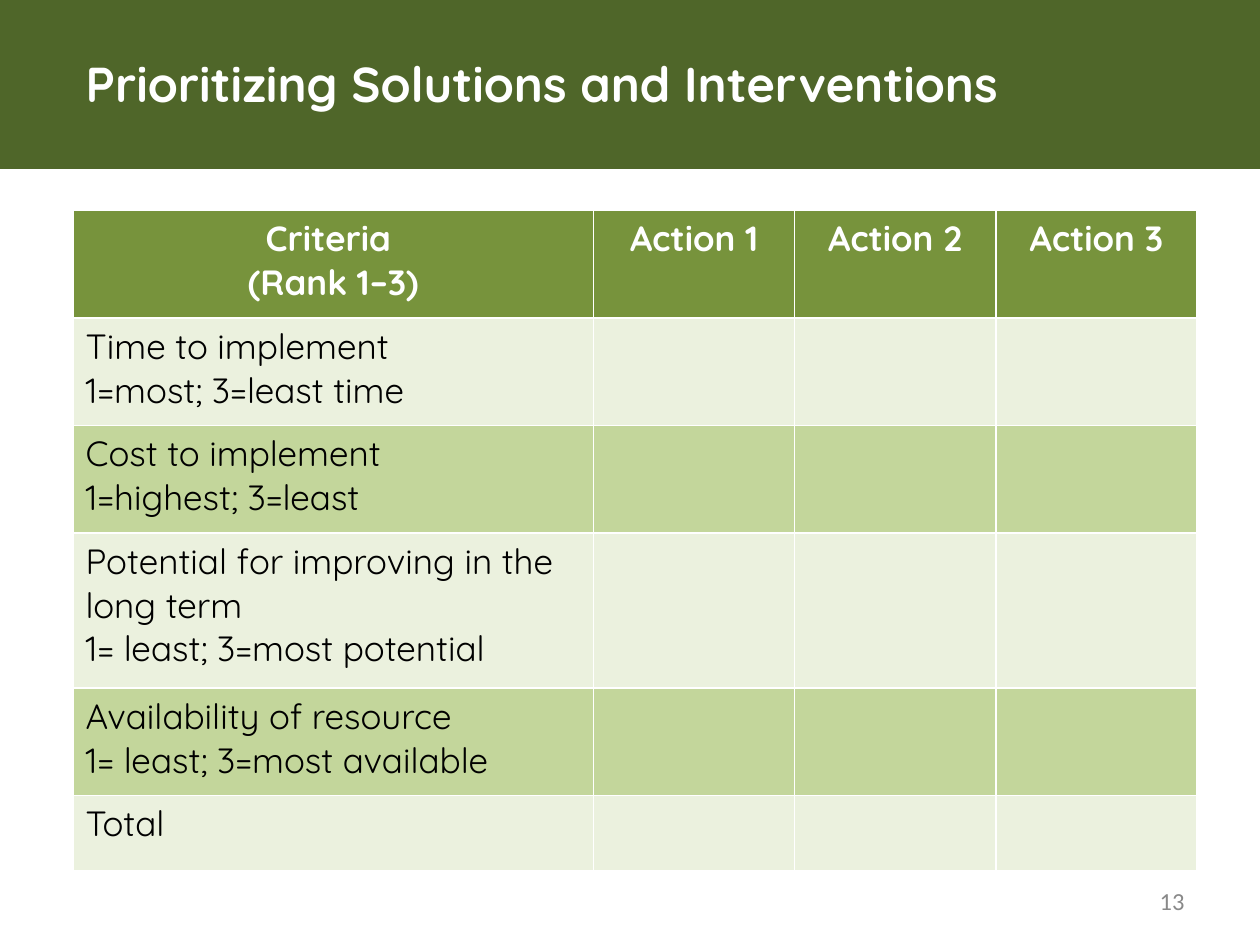
from dataclasses import dataclass

from lxml import etree
from pptx import Presentation
from pptx.dml.color import RGBColor
from pptx.enum import shapes, text
from pptx.oxml import ns
from pptx.util import Pt

COLORS = {
    "band": "4F6629",
    "header": "77933C",
    "light": "EBF1DE",
    "medium": "C3D69B",
    "white": "FFFFFF",
    "black": "000000",
    "gray": "898989",
}


@dataclass(frozen=True)
class Box:
    left: float
    top: float
    width: float
    height: float

    def lengths(self) -> tuple:
        return Pt(self.left), Pt(self.top), Pt(self.width), Pt(self.height)


@dataclass(frozen=True)
class Style:
    size: float
    color: str
    bold: bool = False
    font: str = "Quicksand"
    align: text.PP_ALIGN = text.PP_ALIGN.LEFT


@dataclass(frozen=True)
class Row:
    height: float
    cells: tuple[tuple[str, ...], ...]


TITLE = Style(28, "white", bold=True)
HEADER = Style(20, "white", bold=True, align=text.PP_ALIGN.CENTER)
BODY = Style(20, "black")
PAGE_NUMBER = Style(14, "gray", font="Calibri", align=text.PP_ALIGN.RIGHT)

BAND_BOX = Box(-10.08, -7.92, 739.44, 104.4)
TITLE_BOX = Box(41.76, 30.24, 566.64, 33.84)
TABLE_BOX = Box(41.76, 120.24, 642.4, 377.5)
NUMBER_BOX = Box(516.24, 500.4, 167.76, 28.8)

COLUMN_WIDTHS = (297.4, 115, 115, 115)
ROWS = (
    Row(61.4, (("Criteria ", "(Rank 1–3)"), ("Action 1",), ("Action 2",), ("Action 3",))),
    Row(61.4, (("Time to implement", "1=most; 3=least time"),)),
    Row(61.4, (("Cost to implement", "1=highest; 3=least"),)),
    Row(88.7, (("Potential for improving in the long term", "1= least; 3=most potential"),)),
    Row(61.4, (("Availability of resource", "1= least; 3=most available"),)),
    Row(43.2, (("Total",),)),
)


def rgb(name: str) -> RGBColor:
    return RGBColor.from_string(COLORS[name])


def write(frame, lines: tuple[str, ...], style: Style) -> None:
    """Write each line as one paragraph with one styled run."""
    for index, line in enumerate(lines):
        paragraph = frame.paragraphs[0] if index == 0 else frame.add_paragraph()
        paragraph.alignment = style.align
        run = paragraph.add_run()
        run.text = line
        run.font.name = style.font
        run.font.size = Pt(style.size)
        run.font.bold = style.bold
        run.font.color.rgb = rgb(style.color)


def set_borders(cell, color: str, width: float) -> None:
    properties = cell._tc.get_or_add_tcPr()
    for index, side in enumerate(("lnL", "lnR", "lnT", "lnB")):
        line = etree.Element(ns.qn(f"a:{side}"), w=str(Pt(width)))
        fill = etree.SubElement(line, ns.qn("a:solidFill"))
        etree.SubElement(fill, ns.qn("a:srgbClr"), val=COLORS[color])
        properties.insert(index, line)


def add_band(slide) -> None:
    """Add the green band behind the title."""
    band = slide.shapes.add_shape(shapes.MSO_SHAPE.RECTANGLE, *BAND_BOX.lengths())
    band.shadow.inherit = False
    band.fill.solid()
    band.fill.fore_color.rgb = rgb("band")
    band.line.fill.background()
    slide.shapes.title._element.addprevious(band._element)


def add_title(slide) -> None:
    title = slide.shapes.title
    title.left, title.top, title.width, title.height = TITLE_BOX.lengths()
    frame = title.text_frame
    frame.auto_size = text.MSO_AUTO_SIZE.NONE
    frame.vertical_anchor = text.MSO_ANCHOR.MIDDLE
    write(frame, ("Prioritizing Solutions and Interventions",), TITLE)


def add_criteria_table(slide) -> None:
    table = slide.shapes.add_table(
        len(ROWS), len(COLUMN_WIDTHS), *TABLE_BOX.lengths()
    ).table
    for column, width in zip(table.columns, COLUMN_WIDTHS):
        column.width = Pt(width)
    for row_index, row in enumerate(ROWS):
        table.rows[row_index].height = Pt(row.height)
        if row_index == 0:
            fill, style = "header", HEADER
        else:
            fill, style = ("light" if row_index % 2 else "medium"), BODY
        for column_index in range(len(COLUMN_WIDTHS)):
            cell = table.cell(row_index, column_index)
            cell.fill.solid()
            cell.fill.fore_color.rgb = rgb(fill)
            set_borders(cell, "white", 1)
            if column_index < len(row.cells):
                write(cell.text_frame, row.cells[column_index], style)


def add_page_number(slide) -> None:
    frame = slide.shapes.add_textbox(*NUMBER_BOX.lengths()).text_frame
    frame.word_wrap = True
    frame.vertical_anchor = text.MSO_ANCHOR.MIDDLE
    write(frame, ("13",), PAGE_NUMBER)


def main() -> None:
    presentation = Presentation()
    presentation.slide_width, presentation.slide_height = Pt(720), Pt(540)
    slide = presentation.slides.add_slide(presentation.slide_layouts[5])
    add_band(slide)
    add_title(slide)
    add_criteria_table(slide)
    add_page_number(slide)
    presentation.save("out.pptx")


if __name__ == "__main__":
    main()
